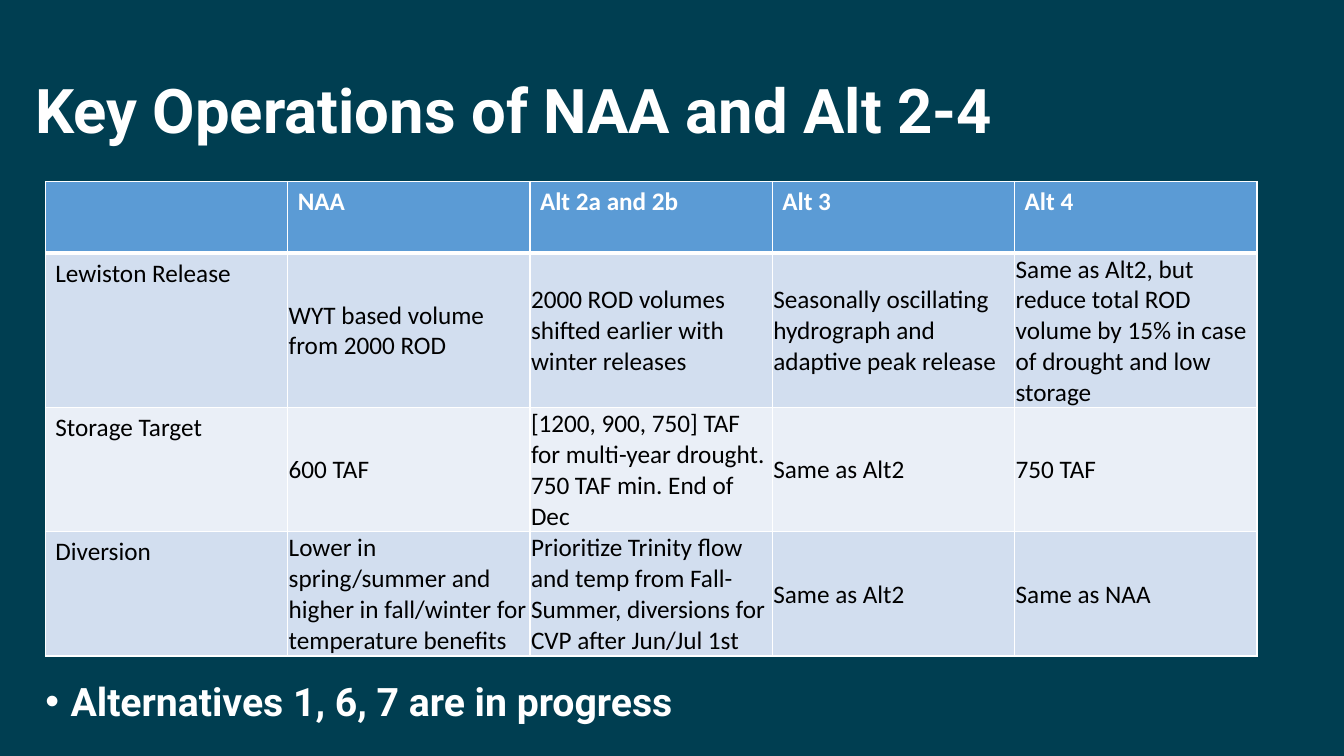
from dataclasses import dataclass

from lxml import etree
from pptx import Presentation
from pptx import util as u
from pptx.dml import color
from pptx.enum import text
from pptx.oxml import ns


@dataclass(frozen=True)
class Theme:
    background: str = "003E51"
    light: str = "FFFFFF"
    dark: str = "000000"
    header: str = "5B9BD5"
    bands: tuple = ("D2DEEF", "EAEFF7")
    heading_font: str = "Roboto"
    table_font: str = "Calibri"
    title_size: int = 44
    body_size: int = 28
    table_size: int = 18


THEME = Theme()
COLUMN_WIDTH = 173.1
ROW_HEIGHTS = (51.1, 87.8, 51.1, 51.1)
OPERATIONS = (
    ("", "NAA", "Alt 2a and 2b", "Alt 3", "Alt 4"),
    (
        "Lewiston Release",
        "WYT based volume from 2000 ROD",
        "2000 ROD volumes shifted earlier with winter releases",
        "Seasonally oscillating hydrograph and adaptive peak release",
        "Same as Alt2, but reduce total ROD volume by 15% in case of drought and low storage",
    ),
    (
        "Storage Target",
        "600 TAF",
        "[1200, 900, 750] TAF for multi-year drought. 750 TAF min. End of Dec",
        "Same as Alt2",
        "750 TAF",
    ),
    (
        "Diversion",
        "Lower in spring/summer and higher in fall/winter for temperature benefits",
        "Prioritize Trinity flow and temp from Fall-Summer, diversions for CVP after Jun/Jul 1st",
        "Same as Alt2",
        "Same as NAA",
    ),
)


def rgb(value):
    return color.RGBColor.from_string(value)


def style_font(paragraph, name, size, colour, bold):
    font = paragraph.font
    font.name = name
    font.size = u.Pt(size)
    font.color.rgb = rgb(colour)
    font.bold = bold


def place(shape, box):
    shape.left, shape.top, shape.width, shape.height = (u.Pt(n) for n in box)


def fill_placeholder(shape, box, wording, size, anchor):
    place(shape, box)
    frame = shape.text_frame
    frame.text = wording
    frame.word_wrap = True
    frame.auto_size = text.MSO_AUTO_SIZE.NONE
    frame.vertical_anchor = anchor
    paragraph = frame.paragraphs[0]
    paragraph.alignment = text.PP_ALIGN.LEFT
    paragraph.line_spacing = 0.9
    paragraph.space_before = u.Pt(0)
    return paragraph, size


def add_title(slide, box):
    paragraph, size = fill_placeholder(
        slide.shapes.title, box, "Key Operations of NAA and Alt 2-4",
        THEME.title_size, text.MSO_ANCHOR.MIDDLE)
    style_font(paragraph, THEME.heading_font, size, THEME.light, True)


def add_progress_note(slide, box):
    paragraph, size = fill_placeholder(
        slide.placeholders[1], box, "Alternatives 1, 6, 7 are in progress",
        THEME.body_size, text.MSO_ANCHOR.TOP)
    properties = paragraph._p.get_or_add_pPr()
    properties.set("marL", str(u.Pt(18)))
    properties.set("indent", str(u.Pt(-18)))
    etree.SubElement(properties, ns.qn("a:buFont"), typeface="Arial")
    etree.SubElement(properties, ns.qn("a:buChar"), char="•")
    style_font(paragraph, THEME.heading_font, size, THEME.light, True)


def add_borders(cell, top, bottom):
    properties = cell._tc.get_or_add_tcPr()
    for side, width in (("L", 1), ("R", 1), ("T", top), ("B", bottom)):
        line = etree.SubElement(properties, ns.qn(f"a:ln{side}"), w=str(u.Pt(width)))
        solid = etree.SubElement(line, ns.qn("a:solidFill"))
        etree.SubElement(solid, ns.qn("a:srgbClr"), val=THEME.light)


def format_cell(cell, row, column):
    is_header = row == 0
    add_borders(cell, 3 if row == 1 else 1, 3 if is_header else 1)
    cell.fill.solid()
    cell.fill.fore_color.rgb = rgb(THEME.header if is_header else THEME.bands[(row - 1) % 2])
    if not is_header and column > 0:
        cell.vertical_anchor = text.MSO_ANCHOR.MIDDLE
        cell.margin_left = cell.margin_right = cell.margin_top = u.Pt(0.75)
        cell.margin_bottom = u.Pt(0)
    style_font(cell.text_frame.paragraphs[0], THEME.table_font, THEME.table_size,
               THEME.light if is_header else THEME.dark, is_header)


def add_operations_table(slide, box):
    frame = slide.shapes.add_table(
        len(OPERATIONS), len(OPERATIONS[0]), *(u.Pt(n) for n in box))
    table = frame.table
    for column in table.columns:
        column.width = u.Pt(COLUMN_WIDTH)
    for row, height in zip(table.rows, ROW_HEIGHTS):
        row.height = u.Pt(height)
    for row, values in enumerate(OPERATIONS):
        for column, value in enumerate(values):
            cell = table.cell(row, column)
            cell.text = value
            format_cell(cell, row, column)
    place(frame, box)


def add_operations_slide(presentation):
    slide = presentation.slides.add_slide(presentation.slide_layouts[1])
    slide.background.fill.solid()
    slide.background.fill.fore_color.rgb = rgb(THEME.background)
    add_title(slide, (18, 28.8, 921.6, 104.4))
    add_progress_note(slide, (25.2, 483.8, 921.6, 46.8))
    add_operations_table(slide, (32.4, 129.6, 5 * COLUMN_WIDTH, 334))


def main():
    presentation = Presentation()
    presentation.slide_width = u.Pt(960)
    presentation.slide_height = u.Pt(540)
    add_operations_slide(presentation)
    presentation.save("out.pptx")


if __name__ == "__main__":
    main()
